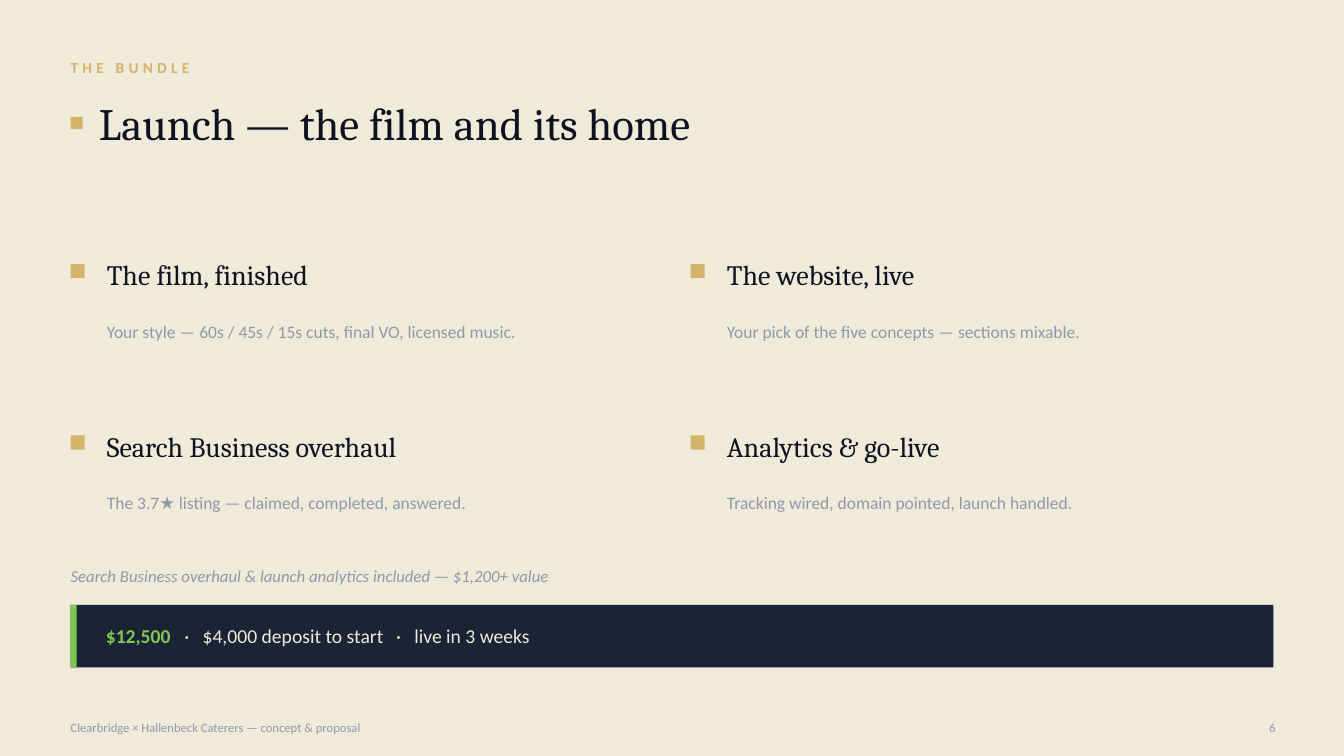
import pptx
import pptx.dml.color
import pptx.enum.shapes
import pptx.enum.text
import pptx.util
from lxml import etree
from pptx.oxml.ns import qn

Inches = pptx.util.Inches
RGBColor = pptx.dml.color.RGBColor
Align = pptx.enum.text.PP_ALIGN

CREAM = RGBColor(0xF0, 0xEA, 0xD9)
GOLD = RGBColor(0xD4, 0xB3, 0x6A)
INK = RGBColor(0x0D, 0x12, 0x20)
GRAY = RGBColor(0x8F, 0x99, 0xAD)
NAVY = RGBColor(0x1B, 0x24, 0x36)
GREEN = RGBColor(0x7E, 0xC8, 0x50)

LABEL = "THE BUNDLE"
TITLE = "Launch — the film and its home"
ITEMS = [
    ("The film, finished",
     "Your style — 60s / 45s / 15s cuts, final VO, licensed music."),
    ("The website, live",
     "Your pick of the five concepts — sections mixable."),
    ("Search Business overhaul",
     "The 3.7★ listing — claimed, completed, answered."),
    ("Analytics & go-live",
     "Tracking wired, domain pointed, launch handled."),
]
NOTE = "Search Business overhaul & launch analytics included — $1,200+ value"
PRICE = "$12,500"
TERMS = ["$4,000 deposit to start", "live in 3 weeks"]
STOPS = [0.78, 0.96, 2.88, 3.06]
FOOTER = "Clearbridge × Hallenbeck Caterers — concept & proposal"
NUMBER = "6"

LEFT = 0.7
COL_STEP, ROW_STEP = 6.15, 1.7
ROW_TOP = 2.5
BAR_TOP, BAR_HIGH = 6, 0.62


def place(shape, box):
    """Move a shape to a box given in inches."""
    shape.left, shape.top, shape.width, shape.height = map(Inches, box)


def add_rect(slide, box, color):
    """Add a plain filled rectangle."""
    kind = pptx.enum.shapes.MSO_SHAPE.RECTANGLE
    rect = slide.shapes.add_shape(kind, *map(Inches, box))
    rect.shadow.inherit = False
    rect.fill.solid()
    rect.fill.fore_color.rgb = color
    rect.line.fill.background()


def set_text(shape, text, size, color, face="Calibri", align=Align.LEFT):
    """Write one styled paragraph and return it."""
    frame = shape.text_frame
    frame.word_wrap = True
    frame.auto_size = pptx.enum.text.MSO_AUTO_SIZE.NONE
    frame.vertical_anchor = pptx.enum.text.MSO_ANCHOR.MIDDLE
    frame.margin_left = frame.margin_right = 0
    frame.margin_top = frame.margin_bottom = 0
    para = frame.paragraphs[0]
    para.text = text
    para.alignment = align
    para.font.name = face
    para.font.size = pptx.util.Pt(size)
    para.font.color.rgb = color
    return para


def add_text(slide, box, *style, **more):
    """Add a text box holding one paragraph."""
    return set_text(slide.shapes.add_textbox(*map(Inches, box)), *style, **more)


def add_item(slide, left, top, head, body):
    """Add one marked heading with its detail line."""
    add_rect(slide, (left, top + 0.12, 0.14, 0.14), GOLD)
    add_text(slide, (left + 0.36, top, 5.55, 0.45), head, 20, INK, "Cambria")
    para = add_text(slide, (left + 0.36, top + 0.5, 5.55, 0.55),
                    body, 12.5, GRAY)
    para.line_spacing = 1.1


def add_bar(slide):
    """Add the price bar, its parts set on tab stops."""
    add_rect(slide, (LEFT, BAR_TOP, 11.93, BAR_HIGH), NAVY)
    add_rect(slide, (LEFT, BAR_TOP, 0.06, BAR_HIGH), GREEN)
    box = slide.shapes.add_textbox(
        *map(Inches, (1.05, BAR_TOP, 11.23, BAR_HIGH)))
    props = box.text_frame.paragraphs[0]._p.get_or_add_pPr()
    tabs = etree.SubElement(props, qn("a:tabLst"))
    for stop in STOPS:
        etree.SubElement(tabs, qn("a:tab"), pos=str(Inches(stop)), algn="l")
    para = set_text(box, PRICE, 14, CREAM)
    price = para.runs[0].font
    price.bold = True
    price.color.rgb = GREEN
    para.add_run().text = "".join(f"\t·\t{term}" for term in TERMS)


def main():
    """Build the bundle slide and save it."""
    deck = pptx.Presentation()
    deck.slide_width, deck.slide_height = Inches(13.33), Inches(7.5)
    slide = deck.slides.add_slide(deck.slide_layouts[5])
    slide.background.fill.solid()
    slide.background.fill.fore_color.rgb = CREAM

    label = add_text(slide, (LEFT, 0.52, 11.9, 0.3), LABEL, 11, GOLD)
    label.font.bold = True
    label.runs[0].font._element.set("spc", "300")
    add_rect(slide, (LEFT, 1.16, 0.12, 0.12), GOLD)
    title = slide.shapes.title
    place(title, (0.98, 0.87, 11.6, 0.7))
    set_text(title, TITLE, 32, INK, "Cambria")

    for i, (head, body) in enumerate(ITEMS):
        row, col = divmod(i, 2)
        add_item(slide, LEFT + col * COL_STEP, ROW_TOP + row * ROW_STEP,
                 head, body)

    note = add_text(slide, (LEFT, 5.55, 11.9, 0.32), NOTE, 12, GRAY)
    note.font.italic = True
    add_bar(slide)
    add_text(slide, (LEFT, 7.08, 6.5, 0.28), FOOTER, 9, GRAY)
    add_text(slide, (12.2, 7.08, 0.45, 0.28), NUMBER, 9, GRAY,
             align=Align.RIGHT)
    deck.save("out.pptx")


if __name__ == "__main__":
    main()
